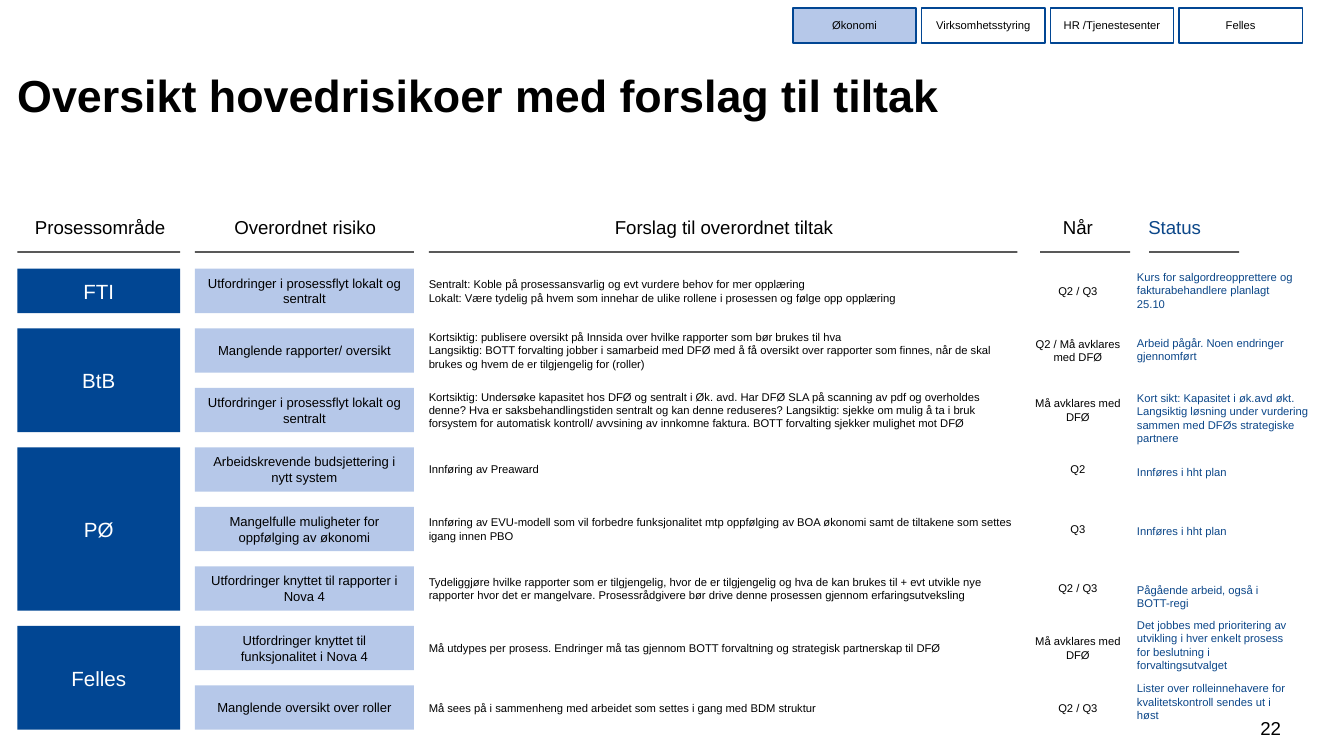
from pptx import Presentation
from pptx.dml.color import RGBColor
from pptx.enum.shapes import MSO_SHAPE
from pptx.enum.text import MSO_ANCHOR, PP_ALIGN
from pptx.util import Inches, Pt

RECT = MSO_SHAPE.RECTANGLE
LEFT, CENTER = PP_ALIGN.LEFT, PP_ALIGN.CENTER
TOP, MIDDLE = MSO_ANCHOR.TOP, MSO_ANCHOR.MIDDLE

BLACK = RGBColor(0x00, 0x00, 0x00)
WHITE = RGBColor(0xFF, 0xFF, 0xFF)
NAVY = RGBColor(0x01, 0x46, 0x93)
PALE = RGBColor(0xB6, 0xC8, 0xE9)
BLUE = RGBColor(0x0C, 0x47, 0x89)

TABS = ["Økonomi", "Virksomhetsstyring", "HR /Tjenestesenter", "Felles"]

# Heading, text left and width, rule left and width, colour
HEADS = [
    ("Prosessområde", 0.13, 1.23, 0.13, 1.21, BLACK),
    ("Overordnet risiko", 1.45, 1.64, 1.45, 1.63, BLACK),
    ("Forslag til overordnet tiltak", 3.19, 4.39, 3.19, 4.38, BLACK),
    ("Når", 7.68, 0.68, 7.74, 0.67, BLACK),
    ("Status", 8.4, 0.68, 8.55, 0.67, BLUE),
]

# Process area and the number of rows it spans
AREAS = [("FTI", 1), ("BtB", 2), ("PØ", 3), ("Felles", 2)]

# Risk, measure, timing: each a list of paragraphs, with \n as line break
ROWS = [
    (["Utfordringer i prosessflyt lokalt og\nsentralt"],
     ["Sentralt: Koble på prosessansvarlig og evt vurdere behov for mer opplæring",
      "Lokalt: Være tydelig på hvem som innehar de ulike rollene i prosessen og følge opp opplæring"],
     ["Q2 / Q3"]),
    (["Manglende rapporter/ oversikt"],
     ["Kortsiktig: publisere oversikt på Innsida over hvilke rapporter som bør brukes til hva\n"
      "Langsiktig: BOTT forvalting jobber i samarbeid med DFØ med å få oversikt over rapporter som finnes, når de skal\n"
      "brukes og hvem de er tilgjengelig for (roller)"],
     ["Q2 / Må avklares\nmed DFØ"]),
    (["Utfordringer i prosessflyt lokalt og\nsentralt"],
     ["Kortsiktig: Undersøke kapasitet hos DFØ og sentralt i Øk. avd. Har DFØ SLA på scanning av pdf og overholdes\n"
      "denne? Hva er saksbehandlingstiden sentralt og kan denne reduseres? Langsiktig: sjekke om mulig å ta i bruk\n"
      "forsystem for automatisk kontroll/ avvsining av innkomne faktura. BOTT forvalting sjekker mulighet mot DFØ"],
     ["Må avklares med\nDFØ"]),
    (["Arbeidskrevende budsjettering i\nnytt system"],
     ["Innføring av Preaward"],
     ["Q2"]),
    (["Mangelfulle muligheter for\noppfølging av økonomi"],
     ["Innføring av EVU-modell som vil forbedre funksjonalitet mtp oppfølging av BOA økonomi samt de tiltakene som settes\n"
      "igang innen PBO"],
     ["Q3"]),
    (["Utfordringer knyttet til rapporter i\nNova 4"],
     ["Tydeliggjøre hvilke rapporter som er tilgjengelig, hvor de er tilgjengelig og hva de kan brukes til + evt utvikle nye\n"
      "rapporter hvor det er mangelvare. Prosessrådgivere bør drive denne prosessen gjennom erfaringsutveksling"],
     ["Q2 / Q3"]),
    (["Utfordringer knyttet til\nfunksjonalitet i Nova 4"],
     ["Må utdypes per prosess. Endringer må tas gjennom BOTT forvaltning og strategisk partnerskap til DFØ"],
     ["Må avklares med\nDFØ"]),
    (["Manglende oversikt over roller"],
     ["Må sees på i sammenheng med arbeidet som settes i gang med BDM struktur"],
     ["Q2 / Q3"]),
]

# Top, width, height and paragraphs of each status note
NOTES = [
    (2.01, 1.17, 0.45, ["Kurs for salgordreopprettere og fakturabehandlere planlagt 25.10"]),
    (2.5, 1.17, 0.2, ["Arbeid pågår. Noen endringer gjennomført"]),
    (2.91, 1.44, 0.47, ["Kort sikt: Kapasitet i øk.avd økt.",
                        "Langsiktig løsning under vurdering sammen med DFØs strategiske partnere"]),
    (3.46, 1.17, 0.45, ["Innføres i hht plan"]),
    (3.9, 1.17, 0.45, ["Innføres i hht plan"]),
    (4.34, 1.17, 0.45, ["Pågående arbeid, også i BOTT-regi"]),
    (4.6, 1.17, 0.26, ["Det jobbes med prioritering av utvikling i hver enkelt prosess for beslutning i forvaltingsutvalget"]),
    (5.07, 1.17, 0.45, ["Lister over rolleinnehavere for kvalitetskontroll sendes ut i høst"]),
]


def write(frame, paras, size, color=BLACK, align=LEFT, anchor=TOP, inset=0.0, bold=False):
    frame.word_wrap = True
    frame.vertical_anchor = anchor
    frame.margin_left = frame.margin_right = Inches(inset)
    frame.margin_top = frame.margin_bottom = Inches(inset / 2)
    for i, text in enumerate(paras):
        para = frame.add_paragraph() if i else frame.paragraphs[0]
        para.alignment = align
        for j, line in enumerate(text.split("\n")):
            if j:
                para.add_line_break()
            run = para.add_run()
            run.text = line
            run.font.name = "Arial"
            run.font.size = Pt(size)
            run.font.bold = bold
            run.font.color.rgb = color


def label(slide, box, paras, size, **style):
    shape = slide.shapes.add_textbox(*map(Inches, box))
    write(shape.text_frame, paras, size, **style)


def block(shapes, box, fill=None, line=None):
    shape = shapes.add_shape(RECT, *map(Inches, box))
    shape.shadow.inherit = False
    if fill is None:
        shape.fill.background()
    else:
        shape.fill.solid()
        shape.fill.fore_color.rgb = fill
    if line is None:
        shape.line.fill.background()
    else:
        shape.line.color.rgb = line
        shape.line.width = Pt(0.75)
    return shape


def add_tabs(slide, left, top, width, height):
    """Navigation tabs, the first one active."""
    group = slide.shapes.add_group_shape()
    gap = 0.04
    wide = (width - gap * (len(TABS) - 1)) / len(TABS)
    for i, name in enumerate(TABS):
        box = (left + i * (wide + gap), top, wide, height)
        tab = block(group.shapes, box, None if i else PALE, NAVY)
        write(tab.text_frame, [name], 6, align=CENTER, anchor=MIDDLE)


def add_heads(slide, top):
    """Column headings with a rule below each."""
    for text, left, width, start, span, color in HEADS:
        label(slide, (left, top, width, 0.17), [text], 10, color=color, align=CENTER)
        block(slide.shapes, (start, top + 0.26, span, 0.01), BLACK)


def add_grid(slide, top, height):
    """Process areas, risks, measures and timing on equal rows."""
    bar = 0.33
    step = (height - bar) / (len(ROWS) - 1)

    first = 0
    for name, count in AREAS:
        box = (0.13, top + first * step, 1.21, (count - 1) * step + bar)
        area = block(slide.shapes, box, NAVY)
        write(area.text_frame, [name], 11, color=WHITE, align=CENTER, anchor=MIDDLE, inset=0.05)
        first += count

    for i, (risk, plan, when) in enumerate(ROWS):
        y = top + i * step
        card = block(slide.shapes, (1.45, y, 1.63, bar), PALE)
        write(card.text_frame, risk, 7, align=CENTER, anchor=MIDDLE, inset=0.05)
        label(slide, (3.19, y, 4.39, bar), plan, 6, anchor=MIDDLE)
        label(slide, (7.68, y, 0.68, bar), when, 6, align=CENTER, anchor=MIDDLE)


def add_notes(slide, left):
    """Status notes in the last column."""
    for top, width, height, paras in NOTES:
        label(slide, (left, top, width, height), paras, 6, color=BLUE)


def main():
    deck = Presentation()
    deck.slide_width = Inches(10)
    deck.slide_height = deck.slide_width * 9 // 16
    slide = deck.slides.add_slide(deck.slide_layouts[6])

    # Title and page number
    label(slide, (0.03, 0.45, 8.33, 0.51), ["Oversikt hovedrisikoer med forslag til tiltak"],
          24, anchor=MIDDLE, inset=0.1, bold=True)
    label(slide, (9.27, 5.27, 0.37, 0.3), ["22"], 10, align=CENTER, anchor=MIDDLE)

    add_tabs(slide, 5.9, 0.06, 3.79, 0.26)
    add_heads(slide, 1.61)
    add_grid(slide, 2, 3.43)
    add_notes(slide, 8.46)
    deck.save("out.pptx")


if __name__ == "__main__":
    main()
